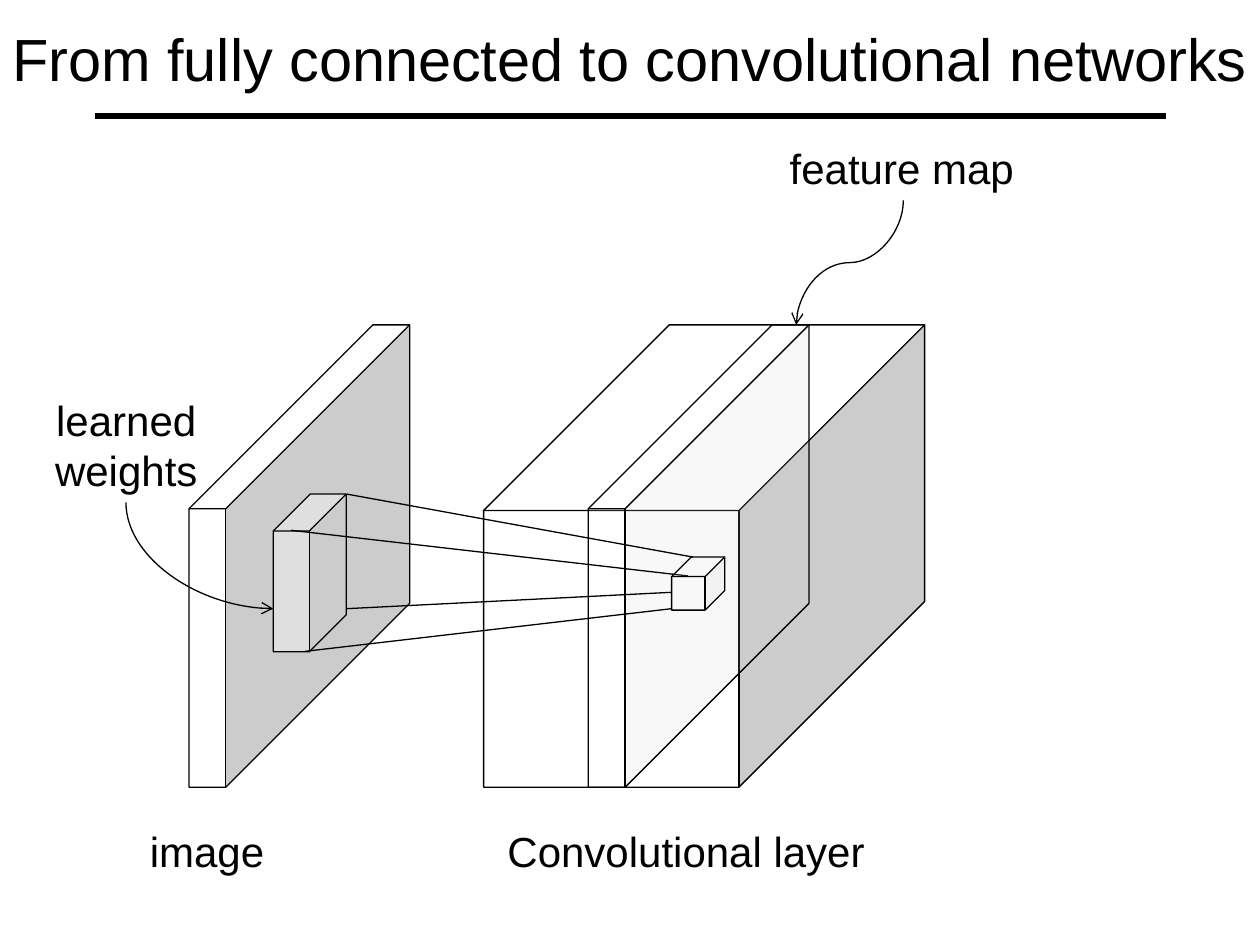
from lxml import etree
from pptx import Presentation
from pptx.dml.color import RGBColor
from pptx.enum.shapes import MSO_CONNECTOR, MSO_SHAPE
from pptx.enum.text import MSO_ANCHOR, MSO_AUTO_SIZE, PP_ALIGN
from pptx.oxml.ns import qn
from pptx.util import Cm, Pt

COLORS = {"ink": "000000", "paper": "FFFFFF"}
FONT = "Arial"
THIN, THICK = 0.75, 3

# All positions in cm. Cubes: left, top, width, height, depth ratio, opacity %
LAYER = (9.75, 6.55, 8.89, 9.32, 0.421, 100)
IMAGE = (3.81, 6.55, 4.45, 9.32, 0.833, 100)
WEIGHTS = (5.51, 9.96, 1.47, 3.18, 0.507, 39)
FEATURE_MAP = (11.86, 6.55, 4.45, 9.32, 0.833, 13)
UNIT = (13.54, 11.23, 1.07, 1.07, 0.369, 13)

TITLE_RULE = (1.91, 2.34, 23.5, 2.34)
PROJECTIONS = [
    (6.99, 9.96, 13.97, 11.23),
    (5.87, 10.69, 13.87, 11.61),
    (6.15, 13.13, 13.54, 12.27),
    (6.99, 12.27, 13.54, 11.94),
]
# Curved arrows: preset, start x, start y, end x, end y
POINTERS = [
    ("curvedConnector3", 18.21, 4.04, 16.05, 6.55),
    ("curvedConnector2", 2.54, 10.13, 5.51, 12.27),
]
# Labels: text, left, top, width, height, wrap, alignment
LABELS = [
    ("image", 2.77, 16.51, 2.84, 1.27, False, PP_ALIGN.LEFT),
    ("feature map", 15.67, 2.74, 5.08, 1.27, False, PP_ALIGN.LEFT),
    ("learned weights", 0.64, 7.82, 3.81, 2.31, True, PP_ALIGN.CENTER),
    ("Convolutional layer", 9.98, 16.51, 7.77, 1.27, False, PP_ALIGN.LEFT),
]
TITLE = ("From fully connected to convolutional networks",
         0, 0, 25.83, 2.34, True, PP_ALIGN.LEFT)


def rgb(name):
    return RGBColor.from_string(COLORS[name])


def style_line(line, width=THIN):
    line.color.rgb = rgb("ink")
    line.width = Pt(width)


def add_cube(s, x, y, w, h, depth, opacity):
    sp = s.shapes.add_shape(MSO_SHAPE.CUBE, Cm(x), Cm(y), Cm(w), Cm(h))
    sp.shadow.inherit = False
    sp.adjustments[0] = depth
    sp.fill.solid()
    sp.fill.fore_color.rgb = rgb("paper")
    if opacity < 100:
        color = sp._element.spPr.find(qn("a:solidFill"))[0]
        etree.SubElement(color, qn("a:alpha")).set("val", str(opacity * 1000))
    style_line(sp.line)


def add_line(s, x1, y1, x2, y2, width=THIN, kind=MSO_CONNECTOR.STRAIGHT):
    cn = s.shapes.add_connector(kind, Cm(x1), Cm(y1), Cm(x2), Cm(y2))
    style_line(cn.line, width)
    etree.SubElement(cn._element.spPr, qn("a:effectLst"))
    return cn


def add_pointer(s, preset, x1, y1, x2, y2):
    """Curved arrow that leaves its start downwards, as a turned connector."""
    cx, cy = (x1 + x2) / 2, (y1 + y2) / 2
    half_w, half_h = abs(y2 - y1) / 2, abs(x2 - x1) / 2
    rightward = x2 > x1
    side = -1 if rightward else 1
    cn = add_line(s, cx - side * half_w, cy - half_h,
                  cx + side * half_w, cy + half_h, kind=MSO_CONNECTOR.CURVE)
    spPr = cn._element.spPr
    spPr.find(qn("a:xfrm")).set("rot", str((270 if rightward else 90) * 60000))
    spPr.find(qn("a:prstGeom")).set("prst", preset)
    etree.SubElement(spPr.find(qn("a:ln")), qn("a:tailEnd")).set("type", "arrow")


def add_text(s, text, x, y, w, h, wrap, align, size=24):
    tf = s.shapes.add_textbox(Cm(x), Cm(y), Cm(w), Cm(h)).text_frame
    tf.word_wrap = wrap
    p = tf.paragraphs[0]
    p.text = text
    p.alignment = align
    p.font.name = FONT
    p.font.size = Pt(size)
    p.font.color.rgb = rgb("ink")
    return tf


def main():
    prs = Presentation()
    prs.slide_width, prs.slide_height = Cm(25.4), Cm(19.05)
    s = prs.slides.add_slide(prs.slide_layouts[6])

    add_line(s, *TITLE_RULE, width=THICK)
    for cube in (LAYER, IMAGE, WEIGHTS, FEATURE_MAP):
        add_cube(s, *cube)
    for ends in PROJECTIONS:
        add_line(s, *ends)
    add_cube(s, *UNIT)
    for pointer in POINTERS:
        add_pointer(s, *pointer)
    for label in LABELS:
        add_text(s, *label).auto_size = MSO_AUTO_SIZE.SHAPE_TO_FIT_TEXT
    add_text(s, *TITLE, size=34).vertical_anchor = MSO_ANCHOR.MIDDLE

    prs.save("out.pptx")


if __name__ == "__main__":
    main()
